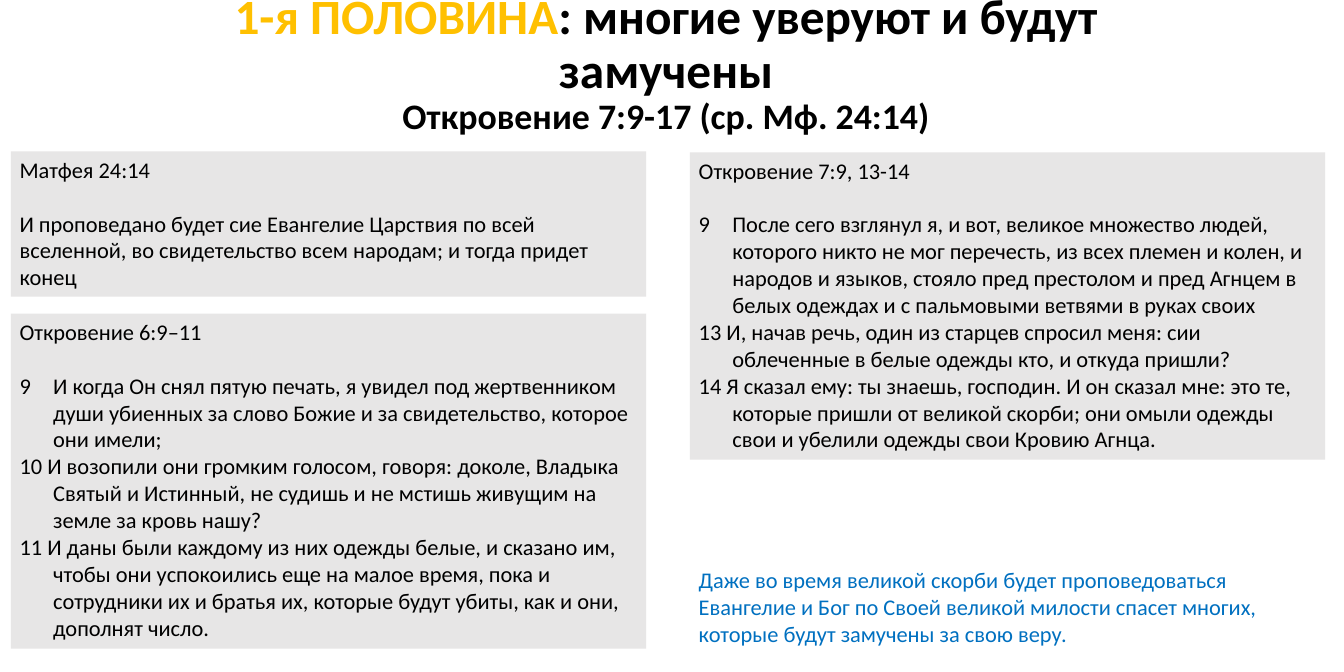
from pptx import Presentation
from pptx.util import Pt
from pptx.dml.color import RGBColor
from pptx.enum.shapes import MSO_SHAPE
from pptx.enum.text import MSO_ANCHOR, PP_ALIGN
from lxml import etree

HEX = {"gold": "FFC000", "black": "000000", "gray": "E7E6E6", "blue": "0070C0"}
FONT = "Calibri"
SIZE, GAP, HANG = 18, 21.6, 27
LEFT, RIGHT, WIDE = 8.64, 554.4, 510.48

# Content: title lines as runs of (text, size, colour)
TITLE = [
    [("1-я ПОЛОВИНА", 39.6, "gold"),
     (": многие уверуют и будут замучены", 39.6, "black")],
    [("Откровение 7:9-17 (ср. Мф. 24:14)", 28.8, "black")],
]

# Passages: place, heading, plain or hanging verses, number of the first verse
CARDS = [
    {"left": LEFT, "top": 121.68, "high": 116.64, "head": "Матфея 24:14",
     "text": ["И проповедано будет сие Евангелие Царствия по всей вселенной, "
              "во свидетельство всем народам; и тогда придет конец"]},
    {"left": LEFT, "top": 252, "high": 269.28, "head": "Откровение 6:9–11",
     "hang": True,
     "text": ["9\tИ когда Он снял пятую печать, я увидел под жертвенником души "
              "убиенных за слово Божие и за свидетельство, которое они имели;",
              "10 И возопили они громким голосом, говоря: доколе, Владыка Святый "
              "и Истинный, не судишь и не мстишь живущим на земле за кровь нашу?",
              "11 И даны были каждому из них одежды белые, и сказано им, чтобы "
              "они успокоились еще на малое время, пока и сотрудники их и братья "
              "их, которые будут убиты, как и они, дополнят число."]},
    {"left": RIGHT, "top": 122.4, "high": 246.96, "head": "Откровение 7:9, 13-14",
     "hang": True, "start": 9,
     "text": ["После сего взглянул я, и вот, великое множество людей, которого "
              "никто не мог перечесть, из всех племен и колен, и народов и "
              "языков, стояло пред престолом и пред Агнцем в белых одеждах и с "
              "пальмовыми ветвями в руках своих",
              "13 И, начав речь, один из старцев спросил меня: сии облеченные в "
              "белые одежды кто, и откуда пришли?",
              "14 Я сказал ему: ты знаешь, господин. И он сказал мне: это те, "
              "которые пришли от великой скорби; они омыли одежды свои и "
              "убелили одежды свои Кровию Агнца."]},
]

NOTE = ("Даже во время великой скорби будет проповедоваться Евангелие и Бог по "
        "Своей великой милости спасет многих, которые будут замучены за свою веру.")


def color(name):
    return RGBColor.from_string(HEX[name])


def style(run, size, name, bold=False):
    font = run.font
    font.name, font.size, font.bold = FONT, Pt(size), bold
    font.color.rgb = color(name)


def fill_text(frame, lines, name):
    frame.word_wrap = True
    frame.text = "\n".join(lines)
    for para in frame.paragraphs:
        para.alignment = PP_ALIGN.LEFT
        for run in para.runs:
            style(run, SIZE, name)


def number(para, start):
    props = para._p.get_or_add_pPr()
    space = props.nsmap["a"]
    etree.SubElement(props, f"{{{space}}}buFont", typeface="+mj-lt")
    etree.SubElement(props, f"{{{space}}}buAutoNum",
                     type="arabicPlain", startAt=str(start))


def add_card(slide, card):
    box = slide.shapes.add_shape(
        MSO_SHAPE.RECTANGLE, Pt(card["left"]), Pt(card["top"]),
        Pt(WIDE), Pt(card["high"]))
    box.shadow.inherit = False
    box.fill.solid()
    box.fill.fore_color.rgb = color("gray")
    box.line.fill.background()
    frame = box.text_frame
    frame.vertical_anchor = MSO_ANCHOR.TOP
    fill_text(frame, [card["head"], *card["text"]], "black")
    head, *verses = frame.paragraphs
    head.space_after = Pt(GAP)
    if card.get("hang"):
        for verse in verses:
            props = verse._p.get_or_add_pPr()
            props.set("marL", str(Pt(HANG)))
            props.set("indent", str(-Pt(HANG)))
    if "start" in card:
        number(verses[0], card["start"])


deck = Presentation()
deck.slide_width, deck.slide_height = Pt(1080), Pt(540)
slide = deck.slides.add_slide(deck.slide_layouts[6])

# Title
box = slide.shapes.add_textbox(Pt(105.84), Pt(0), Pt(858.96), Pt(104.4))
frame = box.text_frame
frame.word_wrap = True
frame.vertical_anchor = MSO_ANCHOR.MIDDLE
para = frame.paragraphs[0]
para.alignment, para.line_spacing = PP_ALIGN.CENTER, 0.9
for row, line in enumerate(TITLE):
    if row:
        para.add_line_break()
    for text, size, name in line:
        run = para.add_run()
        run.text = text
        style(run, size, name, bold=True)

# Passages
for card in CARDS:
    add_card(slide, card)

# Closing note
box = slide.shapes.add_textbox(Pt(RIGHT), Pt(451.44), Pt(WIDE), Pt(72.72))
fill_text(box.text_frame, [NOTE], "blue")

deck.save("out.pptx")
